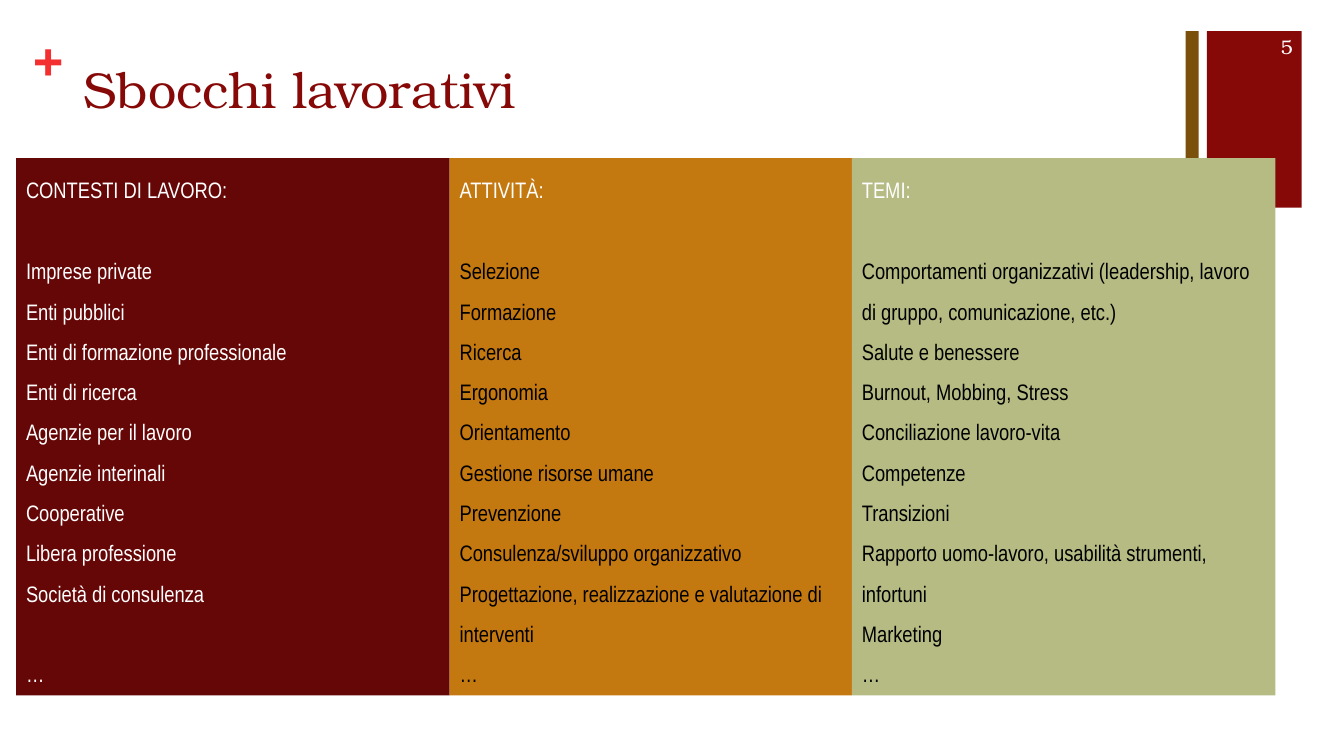
from dataclasses import dataclass

import pptx
import pptx.dml.color
import pptx.enum.shapes
import pptx.enum.text
import pptx.util
from pptx.util import Inches

SERIF = "TeX Gyre Bonum"
SANS = "Arial Narrow"
RED = "860908"
WHITE = "FFFFFF"
BLACK = "000000"

COLUMN_LEFT, COLUMN_TOP, COLUMN_HEIGHT = 0.16, 1.57, 5.33
BAR_TOP, BAR_HEIGHT = 0.31, 1.75
SKIPPED_LINE = 29  # points

ALIGN = pptx.enum.text.PP_ALIGN
ANCHOR = pptx.enum.text.MSO_ANCHOR


@dataclass
class Column:
    heading: str
    items: list[str]
    width: float
    fill: str
    item_color: str
    gap_before_last: int = 0


COLUMNS = [
    Column("CONTESTI DI LAVORO:",
           ["Imprese private", "Enti pubblici", "Enti di formazione professionale",
            "Enti di ricerca", "Agenzie per il lavoro", "Agenzie interinali",
            "Cooperative", "Libera professione", "Società di consulenza", "…"],
           4.3, "650706", WHITE, SKIPPED_LINE),
    Column("ATTIVITÀ:",
           ["Selezione", "Formazione", "Ricerca", "Ergonomia", "Orientamento",
            "Gestione risorse umane", "Prevenzione",
            "Consulenza/sviluppo organizzativo",
            "Progettazione, realizzazione e valutazione di interventi", "…"],
           3.99, "C47810", BLACK),
    Column("TEMI:",
           ["Comportamenti organizzativi (leadership, lavoro di gruppo, "
            "comunicazione, etc.)",
            "Salute e benessere", "Burnout, Mobbing, Stress",
            "Conciliazione lavoro-vita", "Competenze", "Transizioni",
            "Rapporto uomo-lavoro, usabilità strumenti, infortuni",
            "Marketing", "…"],
           4.2, "B5BB83", BLACK),
]


def rgb(color: str) -> pptx.dml.color.RGBColor:
    return pptx.dml.color.RGBColor.from_string(color)


def write(p, text: str, size: float, font: str, color: str,
          align=ALIGN.LEFT, bold: bool = False) -> None:
    p.text = text
    p.alignment = align
    for r in p.runs:
        r.font.size = pptx.util.Pt(size)
        r.font.name = font
        r.font.bold = bold
        r.font.color.rgb = rgb(color)


def add_rect(s, left: float, top: float, width: float, height: float, fill: str):
    sp = s.shapes.add_shape(pptx.enum.shapes.MSO_SHAPE.RECTANGLE, Inches(left),
                            Inches(top), Inches(width), Inches(height))
    sp.shadow.inherit = False
    sp.fill.solid()
    sp.fill.fore_color.rgb = rgb(fill)
    sp.line.fill.background()
    return sp


def add_label(s, left: float, top: float, width: float, height: float):
    """Add an empty wrapping text box and return its text frame."""
    tf = s.shapes.add_textbox(Inches(left), Inches(top),
                              Inches(width), Inches(height)).text_frame
    tf.word_wrap = True
    return tf


def add_title(s, text: str) -> None:
    sp = s.shapes.title
    sp.left, sp.top = Inches(0.73), Inches(0.53)
    sp.width, sp.height = Inches(11.02), Inches(1.22)
    tf = sp.text_frame
    tf.vertical_anchor = ANCHOR.TOP
    tf.auto_size = pptx.enum.text.MSO_AUTO_SIZE.NONE
    write(tf.paragraphs[0], text, 36, SERIF, RED)


def add_column(s, column: Column, left: float) -> None:
    sp = add_rect(s, left, COLUMN_TOP, column.width, COLUMN_HEIGHT, column.fill)
    tf = sp.text_frame
    tf.word_wrap = True
    tf.vertical_anchor = ANCHOR.TOP
    heading = tf.paragraphs[0]
    write(heading, column.heading, 16, SANS, WHITE)
    heading.space_after = pptx.util.Pt(SKIPPED_LINE)
    for item in column.items:
        write(tf.add_paragraph(), item, 16, SANS, column.item_color)
    for p in tf.paragraphs:
        p.line_spacing = 1.5
    tf.paragraphs[-1].space_before = pptx.util.Pt(column.gap_before_last)


def main() -> None:
    prs = pptx.Presentation()
    prs.slide_width, prs.slide_height = Inches(13.33), Inches(7.5)
    s = prs.slides.add_slide(prs.slide_layouts[5])

    add_rect(s, 11.97, BAR_TOP, 0.94, BAR_HEIGHT, RED)
    add_rect(s, 11.76, BAR_TOP, 0.13, BAR_HEIGHT, "7A500A")
    add_title(s, "Sbocchi lavorativi")

    tf = add_label(s, 0.33, 0.25, 0.38, 0.61)
    tf.margin_left = tf.margin_right = tf.margin_top = tf.margin_bottom = 0
    write(tf.paragraphs[0], "+", 36, SERIF, "F3302F", bold=True)

    tf = add_label(s, 12.11, 0.26, 0.81, 0.4)
    tf.vertical_anchor = ANCHOR.MIDDLE
    write(tf.paragraphs[0], "5", 14, SERIF, WHITE, ALIGN.RIGHT)

    left = COLUMN_LEFT
    for column in COLUMNS:
        add_column(s, column, left)
        left += column.width

    prs.save("out.pptx")


if __name__ == "__main__":
    main()
